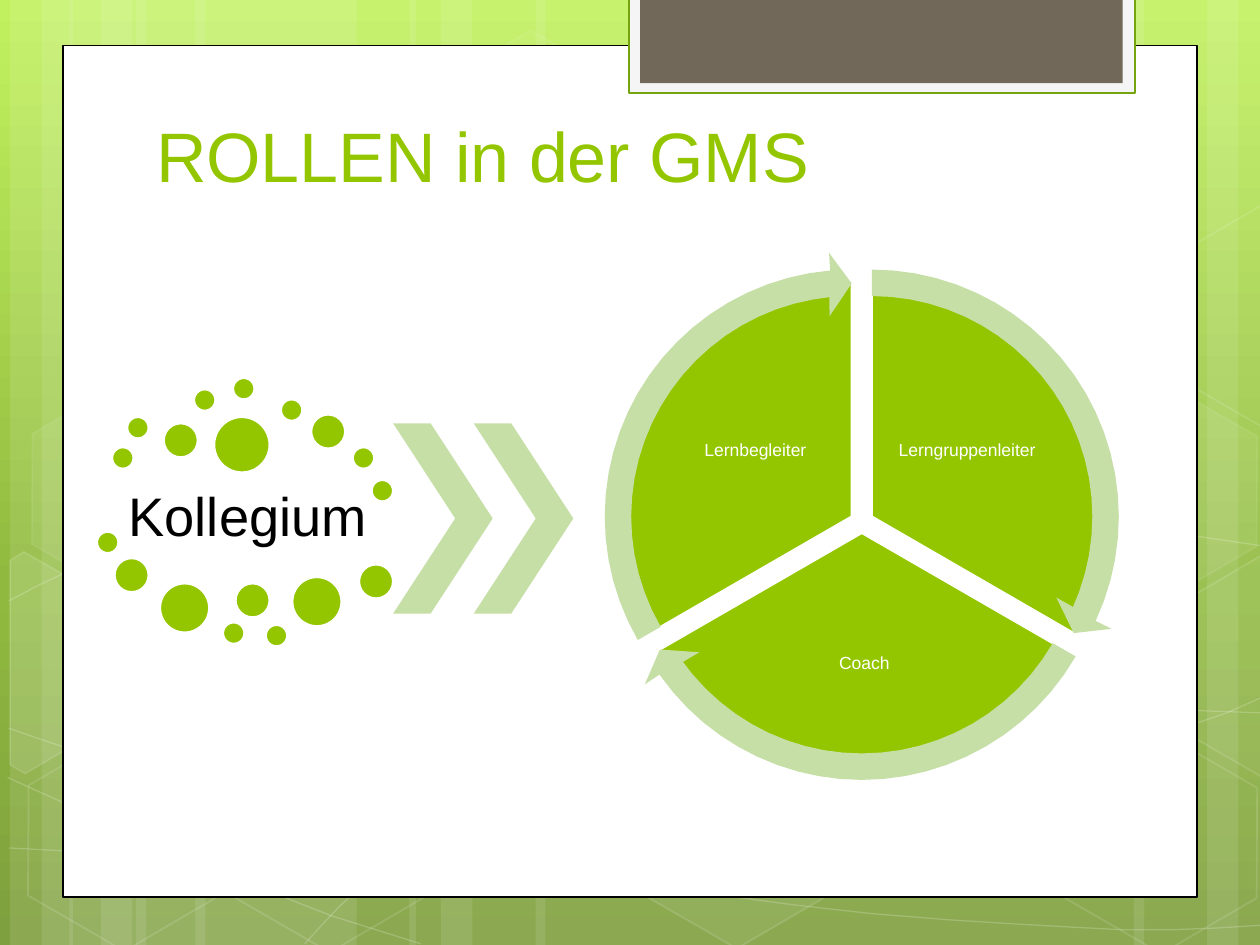
import copy
import math

import pptx
import pptx.dml.color
import pptx.enum.shapes
import pptx.enum.text
import pptx.oxml
import pptx.oxml.ns
import pptx.util

SHAPES = pptx.enum.shapes.MSO_SHAPE
ANCHOR = pptx.enum.text.MSO_ANCHOR
ALIGN = pptx.enum.text.PP_ALIGN
GREEN, PALE_GREEN, WHITE, BLACK = "94C600", "C6DFA7", "FFFFFF", "000000"

STRIPES = [
    (1.08, 1.75), (0.08, 0.5), (0.33, 0.83), (1.55, 1.75), (0.55, 0.5), (0.8, 0.83),
    (7.33, 1.75), (9.58, 0.5), (9, 0.83), (4.25, 3.08), (3.25, 0.5), (3.5, 0.83),
]
CURVES = [
    [(0.07, 6.73), (0.61, 6.76), (1.15, 6.79), (1.9, 6.78), (2.65, 6.77), (3.58, 6.75),
     (4.58, 6.65), (5.58, 6.55), (7, 6.36), (7.92, 6.17), (8.83, 5.98), (9.77, 5.68), (10.07, 5.51)],
    [(0.07, 4.77), (0.36, 4.61), (0.65, 4.46), (1.21, 4.31), (1.78, 4.16), (2.59, 3.94),
     (3.47, 3.87), (4.36, 3.8), (5.44, 3.79), (6.54, 3.87), (7.64, 3.95), (9.47, 4.26), (10.07, 4.34)],
    [(0.06, 6.17), (1.27, 6.72), (2.47, 7.27), (3.34, 7.49)],
    [(0.07, 5.78), (0.38, 5.89), (0.7, 6), (1.28, 6.16), (1.86, 6.31), (2.73, 6.56),
     (3.57, 6.73), (4.4, 6.9), (5.45, 7.08), (6.28, 7.18), (7.11, 7.29), (8, 7.33),
     (8.53, 7.36), (9.05, 7.4), (9.5, 7.38), (10.07, 7.34)],
    [(2.42, 7.49), (2.6, 7.29), (2.78, 7.09), (3.02, 6.91), (3.26, 6.73), (3.6, 6.53),
     (3.88, 6.39), (4.16, 6.25), (4.33, 6.19), (4.7, 6.09), (5.06, 5.99), (5.73, 5.85),
     (6.08, 5.78), (6.8, 5.64), (9, 5.58), (10.06, 5.66)],
]
HEXAGONS = [
    (3.34, 0.36, 4, 8), (4.97, 5.89, 6, 12), (0.11, 5.91, None, 12), (0.14, 3.12, 7, 8),
    (1.74, 5.92, None, 12), (8.34, 5.93, None, 12), (8.34, 3.14, 7, 8),
]
CUT_HEXAGONS = [
    ([(0.08, 4.45), (0.19, 4.38), (0.96, 4.82), (0.95, 5.7), (0.2, 6.14), (0.08, 6.07)], 10),
    ([(9.26, 4.85), (10.01, 4.41), (10.09, 4.46), (10.09, 6.13), (10.02, 6.17), (9.26, 5.73)], 4),
    ([(9.26, 2.07), (10.01, 1.63), (10.1, 1.68), (10.09, 3.35), (10.02, 3.39), (9.26, 2.95)], None),
]
DOTS = {
    0.17: [(0.89, 3.55), (1.01, 3.31), (1.54, 3.09), (1.85, 3), (2.23, 3.17), (2.8, 3.55),
           (2.95, 3.81), (0.77, 4.22), (1.77, 4.94), (2.11, 4.96)],
    0.27: [(1.3, 3.36), (2.47, 3.29), (0.91, 4.43), (1.87, 4.63), (2.85, 4.48)],
    0.39: [(1.27, 4.63), (2.32, 4.58)],
    0.44: [(1.7, 3.31)],
}
ROLES = [
    ("Lerngruppenleiter", (6.92, 4.1), -90, (7.01, 3.02, 1.33, 1.11)),
    ("Coach", (6.84, 4.23), 30, (5.86, 4.78, 2, 0.98)),
    ("Lernbegleiter", (6.76, 4.1), 150, (5.33, 3.02, 1.33, 1.11)),
]


def length(inches):
    return pptx.util.Cm(inches * 2.54)


def color(value):
    return pptx.dml.color.RGBColor.from_string(value)


def paint(fill, value, opacity=100):
    fill.solid()
    fill.fore_color.rgb = color(value)
    if opacity < 100:
        choice = fill._xPr.find(pptx.oxml.ns.qn("a:solidFill"))[0]
        choice.append(pptx.oxml.parse_xml(
            f'<a:alpha {pptx.oxml.ns.nsdecls("a")} val="{opacity * 1000}"/>'))


def style(shape, fill=None, opacity=100, line=None, width=1, line_opacity=100):
    shape.shadow.inherit = False
    if fill:
        paint(shape.fill, fill, opacity)
    else:
        shape.fill.background()
    if line:
        shape.line.width = pptx.util.Pt(width)
        paint(shape.line.fill, line, line_opacity)
    else:
        shape.line.fill.background()


def add_preset(slide, preset, box, adjustments=(), **look):
    shape = slide.shapes.add_shape(preset, *map(length, box))
    for index, value in enumerate(adjustments):
        shape.adjustments[index] = value
    style(shape, **look)
    return shape


def add_outline(slide, points, close=True, **look):
    places = [(length(x), length(y)) for x, y in points]
    builder = slide.shapes.build_freeform(*places[0])
    builder.add_line_segments(places[1:], close=close)
    style(builder.convert_to_shape(), **look)


def add_text(slide, text, box, size, value, inset=(0.01, 0.01), anchor=ANCHOR.MIDDLE,
             alignment=ALIGN.CENTER, spacing=0.9):
    frame = slide.shapes.add_textbox(*map(length, box)).text_frame
    paragraph = frame.paragraphs[0]
    paragraph.text = text
    side, edge = map(length, inset)
    formats = [
        (frame, {"word_wrap": True, "vertical_anchor": anchor, "margin_left": side,
                 "margin_right": side, "margin_top": edge, "margin_bottom": edge}),
        (paragraph, {"alignment": alignment, "line_spacing": spacing}),
        (paragraph.runs[0].font, {"name": "Arial", "size": pptx.util.Pt(size)}),
    ]
    for target, values in formats:
        for name, setting in values.items():
            setattr(target, name, setting)
    paragraph.runs[0].font.color.rgb = color(value)


def bezier_points(controls, steps=4):
    points = [controls[0]]
    for start in range(0, len(controls) - 1, 3):
        segment = controls[start:start + 4]
        for step in range(1, steps + 1):
            t = step / steps
            weights = ((1 - t) ** 3, 3 * t * (1 - t) ** 2, 3 * t ** 2 * (1 - t), t ** 3)
            points.append(tuple(sum(weight * point[axis] for weight, point in zip(weights, segment))
                                for axis in (0, 1)))
    return points


def add_arc_arrow(slide, center, start):
    sweep = range(0, 115, 5)
    polar = [(1.96, angle) for angle in sweep]
    polar += [(1.96, 115), (2.1, 115.1), (1.85, 120), (1.6, 113.7), (1.75, 114.2)]
    polar += [(1.75, angle) for angle in reversed(sweep)]
    points = [(center[0] + radius * math.cos(math.radians(start + angle)),
               center[1] + radius * math.sin(math.radians(start + angle)))
              for radius, angle in polar]
    add_outline(slide, points, fill=PALE_GREEN)


def add_gradient(slide):
    fill = slide.background.fill
    fill.gradient()
    fill.gradient_angle = 270
    stop_list = slide._element.find(".//" + pptx.oxml.ns.qn("a:gsLst"))
    stop_list.append(copy.deepcopy(stop_list[-1]))
    stops = [(0, "C1F15E"), (0.62, "90BA3F"), (1, "7FA03E")]
    for stop, (position, value) in zip(fill.gradient_stops, stops):
        stop.position = position
        stop.color.rgb = color(value)


def add_backdrop(slide):
    add_gradient(slide)
    for left, width in STRIPES:
        add_preset(slide, SHAPES.RECTANGLE, (left, 0, width, 7.5), fill=WHITE, opacity=10)
    for controls in CURVES:
        add_outline(slide, bezier_points(controls), close=False,
                    line=WHITE, width=0.75, line_opacity=20)
    for left, top, opacity, line_opacity in HEXAGONS:
        hexagon = add_preset(slide, SHAPES.HEXAGON, (left, top, 1.75, 1.52), (0.285, 1.155),
                             fill=WHITE if opacity else None, opacity=opacity,
                             line=WHITE, line_opacity=line_opacity)
        hexagon.rotation = 30
    for points, opacity in CUT_HEXAGONS:
        add_outline(slide, points, fill=WHITE if opacity else None, opacity=opacity,
                    line=WHITE, line_opacity=12)
    add_preset(slide, SHAPES.RECTANGLE, (0.5, 0.36, 9, 6.76), fill=WHITE, line=BLACK, width=0.75)
    add_preset(slide, SHAPES.RECTANGLE, (4.99, -0.02, 4.02, 0.76),
               fill="F5F5F5", line="74A50F", width=1.25)
    add_preset(slide, SHAPES.RECTANGLE, (5.08, -0.02, 3.83, 0.68), fill="71685A")


def add_staff(slide):
    add_text(slide, "Kollegium", (0.89, 3.76, 2.15, 0.71), 31, BLACK, (0.04, 0.04))
    for size, places in DOTS.items():
        for left, top in places:
            add_preset(slide, SHAPES.OVAL, (left, top, size, size),
                       fill=GREEN, line=WHITE, width=1.25)
    for left in (3.12, 3.76):
        add_preset(slide, SHAPES.CHEVRON, (left, 3.36, 0.79, 1.51), (0.623,), fill=PALE_GREEN)


def add_role_cycle(slide):
    diameter = 3.73
    for role, (x, y), start, label_box in ROLES:
        angles = [(start + turn) % 360 * 0.6 for turn in (0, 120)]
        add_preset(slide, SHAPES.PIE, (x - diameter / 2, y - diameter / 2, diameter, diameter),
                   angles, fill=GREEN, line=WHITE, width=1.25)
        add_text(slide, role, label_box, 10, WHITE)
    for role, center, start, label_box in ROLES:
        add_arc_arrow(slide, center, start)


def main():
    presentation = pptx.Presentation()
    presentation.slide_width, presentation.slide_height = length(10), length(7.5)
    slide = presentation.slides.add_slide(presentation.slide_layouts[6])
    add_backdrop(slide)
    add_staff(slide)
    add_text(slide, "ROLLEN in der GMS", (1.14, 0.36, 7.68, 1.25), 40, GREEN,
             (0.1, 0.05), ANCHOR.BOTTOM, ALIGN.LEFT, 1)
    add_role_cycle(slide)
    presentation.save("out.pptx")


if __name__ == "__main__":
    main()
